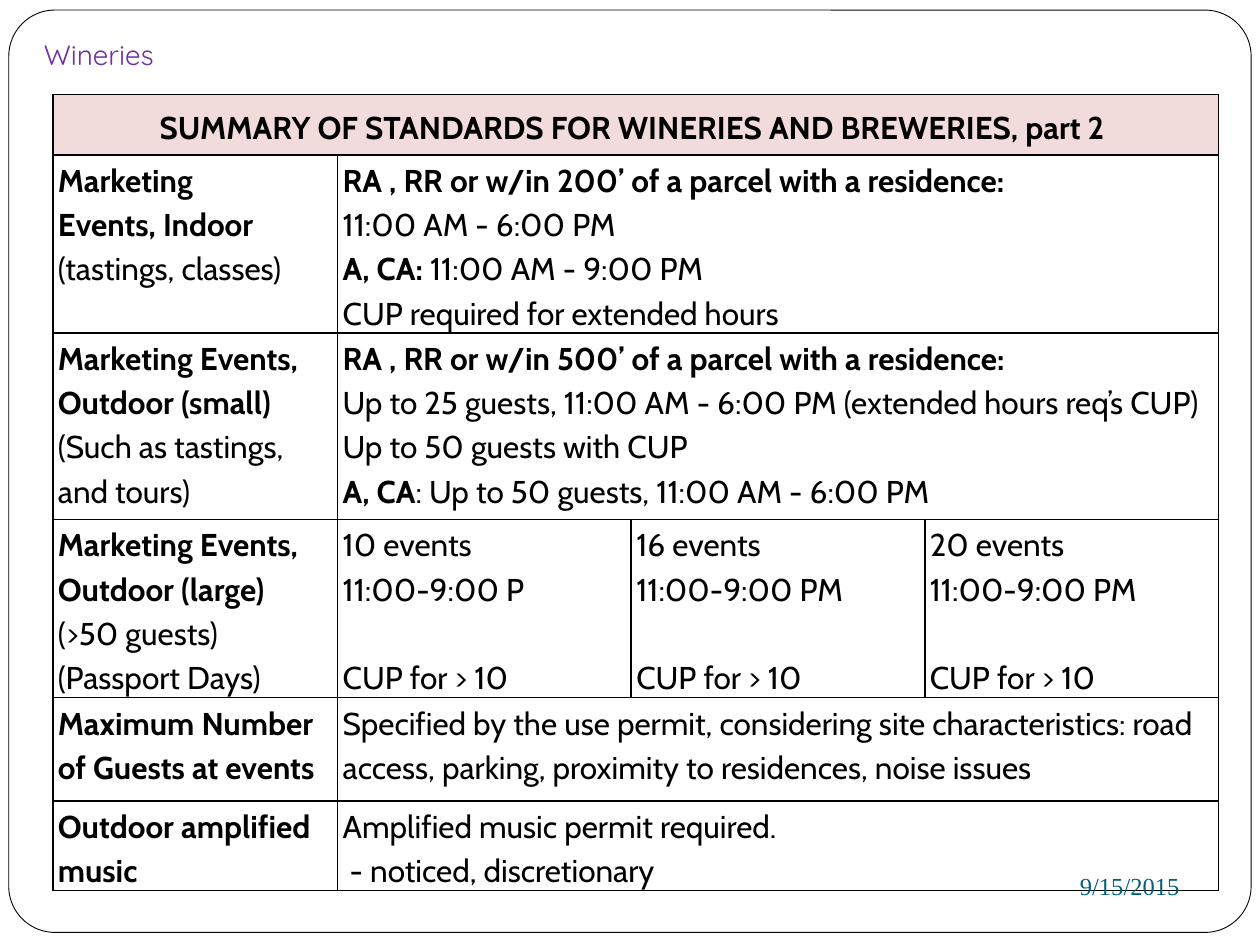
from dataclasses import dataclass

from lxml.etree import SubElement
from pptx import Presentation
from pptx.dml.color import RGBColor
from pptx.enum.shapes import MSO_SHAPE
from pptx.enum.text import MSO_ANCHOR as Anchor, PP_ALIGN as Align
from pptx.oxml.ns import qn
from pptx.util import Inches, Pt


@dataclass(frozen=True)
class Theme:
    black: str = "000000"
    white: str = "FFFFFF"
    header: str = "F2DBDB"
    title: str = "7030A0"
    date: str = "04617B"
    body_font: str = "Cabin"
    title_font: str = "Quicksand"
    date_font: str = "Times New Roman"
    body_size: float = 18
    title_size: float = 16
    date_size: float = 14
    line_spacing: float = 1.15
    skipped_line: float = 25.3
    border: float = 1


THEME = Theme()
TABLE_TITLE = "**SUMMARY OF STANDARDS FOR WINERIES AND BREWERIES, part 2 **"
COLUMN_WIDTHS = [2.26, 2.33, 2.33, 2.33]
HEADER_HEIGHT = 0.48
SKIP = "\v"  # opens a paragraph that stands one line lower


def large_event_terms(events, hours):
    return [f"{events} events", hours, SKIP + "CUP for > 10"]


# Row height, then the paragraphs of each cell; **...** marks bold.
# The last cell of a short row spans the columns that remain.
STANDARDS = [
    (1.21, [
        ["**Marketing**", "**Events, Indoor**", "(tastings, classes)"],
        ["**RA , RR or w/in 200’ of a parcel with a residence:**",
         "11:00 AM - 6:00 PM",
         "**A, CA: **11:00 AM - 9:00 PM",
         "CUP required for extended hours"],
    ]),
    (1.48, [
        ["**Marketing Events, Outdoor (small)**",
         "(Such as tastings, and tours)"],
        ["**RA , RR or w/in 500’ of a parcel with a residence:**",
         "Up to 25 guests, 11:00 AM - 6:00 PM (extended hours req’s CUP)",
         "Up to 50 guests with CUP",
         "**A, CA**: Up to 50 guests, 11:00 AM - 6:00 PM"],
    ]),
    (1.08, [
        ["**Marketing Events, Outdoor (large)**", "(>50 guests)",
         "(Passport Days)"],
        large_event_terms(10, "11:00-9:00 P"),
        large_event_terms(16, "11:00-9:00 PM"),
        large_event_terms(20, "11:00-9:00 PM"),
    ]),
    (0.82, [
        ["**Maximum Number of Guests at events**"],
        ["Specified by the use permit, considering site characteristics: "
         "road access, parking, proximity to residences, noise issues"],
    ]),
    (0.7, [
        ["**Outdoor amplified music**"],
        ["Amplified music permit required.", " - noticed, discretionary"],
    ]),
]


def rgb(code):
    return RGBColor.from_string(code)


def write(frame, paragraphs, *, font, size, color, align=Align.LEFT, spacing=None):
    """Fill a text frame; ** switches bold on and off."""
    frame.word_wrap = True
    for index, text in enumerate(paragraphs):
        paragraph = frame.add_paragraph() if index else frame.paragraphs[0]
        paragraph.alignment = align
        if spacing:
            paragraph.line_spacing = spacing
        if text.startswith(SKIP):
            paragraph.space_before = Pt(THEME.skipped_line)
        for part, words in enumerate(text.removeprefix(SKIP).split("**")):
            if words:
                run = paragraph.add_run()
                run.text = words
                run.font.name = font
                run.font.size = Pt(size)
                run.font.bold = part % 2 == 1
                run.font.color.rgb = rgb(color)


def set_borders(cell):
    properties = cell._tc.get_or_add_tcPr()
    for position, side in enumerate(("lnL", "lnR", "lnT", "lnB")):
        line = SubElement(properties, qn(f"a:{side}"), w=str(Pt(THEME.border)))
        fill = SubElement(line, qn("a:solidFill"))
        SubElement(fill, qn("a:srgbClr"), val=THEME.black)
        properties.insert(position, line)


def add_frame(slide, left, top, width, height):
    frame = slide.shapes.add_shape(
        MSO_SHAPE.ROUNDED_RECTANGLE,
        Inches(left), Inches(top), Inches(width), Inches(height))
    frame.adjustments[0] = 0.05
    frame.shadow.inherit = False
    frame.fill.solid()
    frame.fill.fore_color.rgb = rgb(THEME.white)
    frame.line.color.rgb = rgb(THEME.black)
    frame.line.width = Pt(0.5)


def add_label(slide, text, left, top, width, height, anchor=Anchor.TOP, **style):
    label = slide.shapes.add_textbox(
        Inches(left), Inches(top), Inches(width), Inches(height))
    label.text_frame.vertical_anchor = anchor
    write(label.text_frame, [text], **style)


def fill_cell(cell, paragraphs, **style):
    cell.margin_left = cell.margin_right = Inches(0.04)
    cell.margin_top, cell.margin_bottom = Inches(0.01), 0
    write(cell.text_frame, paragraphs, font=THEME.body_font,
          size=THEME.body_size, color=THEME.black,
          spacing=THEME.line_spacing, **style)


def add_standards(slide, left, top, width, height):
    table = slide.shapes.add_table(
        len(STANDARDS) + 1, len(COLUMN_WIDTHS),
        Inches(left), Inches(top), Inches(width), Inches(height)).table
    table.first_row = table.horz_banding = False
    for column, column_width in zip(table.columns, COLUMN_WIDTHS):
        column.width = Inches(column_width)
    for cell in table.iter_cells():
        cell.fill.background()
        set_borders(cell)

    last = len(COLUMN_WIDTHS) - 1
    heading = table.cell(0, 0)
    heading.merge(table.cell(0, last))
    heading.fill.solid()
    heading.fill.fore_color.rgb = rgb(THEME.header)
    heading.vertical_anchor = Anchor.MIDDLE
    fill_cell(heading, [TABLE_TITLE], align=Align.CENTER)
    table.rows[0].height = Inches(HEADER_HEIGHT)

    for row, (row_height, entries) in enumerate(STANDARDS, start=1):
        table.rows[row].height = Inches(row_height)
        if len(entries) <= last:
            table.cell(row, len(entries) - 1).merge(table.cell(row, last))
        for column, paragraphs in enumerate(entries):
            fill_cell(table.cell(row, column), paragraphs)


def main():
    deck = Presentation()
    deck.slide_width, deck.slide_height = Inches(10), Inches(7.5)
    slide = deck.slides.add_slide(deck.slide_layouts[6])
    add_frame(slide, 0.07, 0.08, 9.86, 7.32)
    add_standards(slide, 0.42, 0.75, 9.25, 6.25)
    add_label(slide, "Wineries", 0.25, 0.25, 1.17, 0.37,
              font=THEME.title_font, size=THEME.title_size, color=THEME.title)
    add_label(slide, "9/15/2015", 6.75, 6.77, 2.71, 0.52, anchor=Anchor.MIDDLE,
              font=THEME.date_font, size=THEME.date_size, color=THEME.date,
              align=Align.RIGHT)
    deck.save("out.pptx")


if __name__ == "__main__":
    main()
